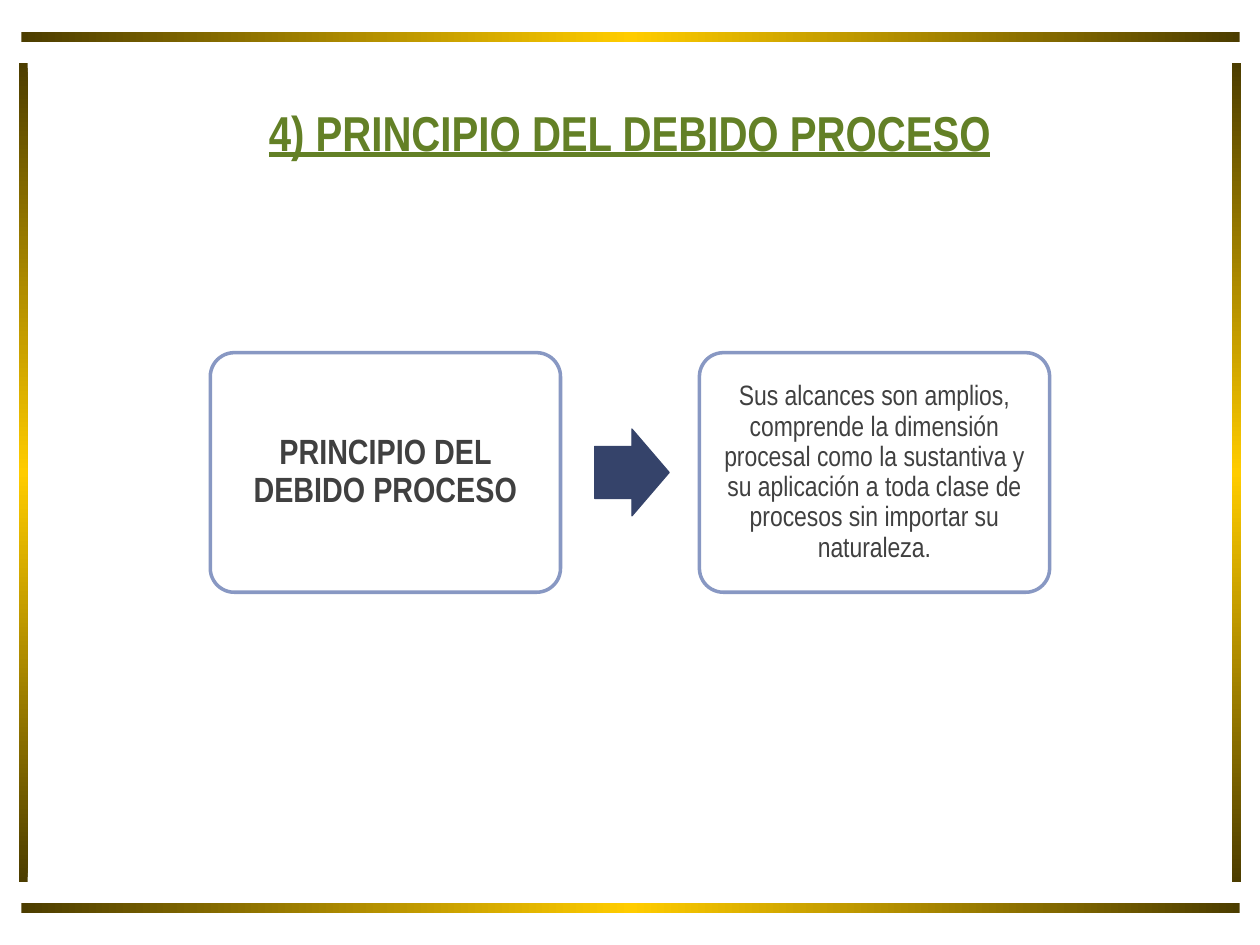
"""Build the slide on the principle of due process."""
from copy import deepcopy
from dataclasses import dataclass

from pptx import Presentation
from pptx.dml.color import RGBColor
from pptx.enum.shapes import MSO_SHAPE
from pptx.enum.text import MSO_ANCHOR, PP_ALIGN
from pptx.oxml.ns import qn
from pptx.shapes.autoshape import Shape
from pptx.slide import Slide
from pptx.text.text import TextFrame
from pptx.util import Cm, Pt

SLIDE_WIDTH, SLIDE_HEIGHT = 25.4, 19.05
CARD_WIDTH, CARD_HEIGHT, CARD_MARGIN, CARD_TOP = 7.06, 4.83, 4.24, 7.11
ARROW_WIDTH, ARROW_HEIGHT = 1.5, 1.75
DARK_GOLD, GOLD = "4C3D00", "FFCC00"
GREEN, GREY, PALE_BLUE, NAVY = "638026", "404040", "8898C3", "35436A"


@dataclass(frozen=True)
class Box:
    left: float
    top: float
    width: float
    height: float

    def emu(self) -> tuple[Cm, Cm, Cm, Cm]:
        return Cm(self.left), Cm(self.top), Cm(self.width), Cm(self.height)


@dataclass(frozen=True)
class Wording:
    text: str
    size: int
    color: str = GREY
    bold: bool = False
    underline: bool = False
    line_spacing: float = 1.0


@dataclass(frozen=True)
class Card:
    left: float
    wording: Wording
    inset: float


def rgb(value: str) -> RGBColor:
    return RGBColor.from_string(value)


def add_preset(slide: Slide, kind: MSO_SHAPE, box: Box) -> Shape:
    preset = slide.shapes.add_shape(kind, *box.emu())
    preset.shadow.inherit = False
    return preset


def add_bar(slide: Slide, box: Box) -> None:
    bar = add_preset(slide, MSO_SHAPE.RECTANGLE, box)
    bar.line.fill.background()
    bar.fill.gradient()
    bar.fill.gradient_angle = 0 if box.width > box.height else 90
    for stop, position in zip(bar.fill.gradient_stops, (0, 1)):
        stop.color.rgb = rgb(DARK_GOLD)
        stop.position = position
    first = bar._element.spPr.find(".//" + qn("a:gs"))
    first.addnext(deepcopy(first))
    middle = bar.fill.gradient_stops[1]
    middle.color.rgb = rgb(GOLD)
    middle.position = 0.5


def write(frame: TextFrame, wording: Wording) -> None:
    frame.word_wrap = True
    frame.vertical_anchor = MSO_ANCHOR.MIDDLE
    paragraph = frame.paragraphs[0]
    paragraph.text = wording.text
    paragraph.alignment = PP_ALIGN.CENTER
    paragraph.line_spacing = wording.line_spacing
    font = paragraph.font
    font.name = "Arial Narrow"
    font.size = Pt(wording.size)
    font.bold = wording.bold
    font.underline = wording.underline
    font.color.rgb = rgb(wording.color)


def add_card(slide: Slide, card: Card) -> None:
    outline = add_preset(slide, MSO_SHAPE.ROUNDED_RECTANGLE,
                         Box(card.left, CARD_TOP, CARD_WIDTH, CARD_HEIGHT))
    outline.adjustments[0] = 0.1
    outline.fill.background()
    outline.line.color.rgb = rgb(PALE_BLUE)
    outline.line.width = Pt(2)
    frame = outline.text_frame
    frame.margin_left = frame.margin_right = Cm(card.inset)
    frame.margin_top = frame.margin_bottom = Cm(card.inset)
    write(frame, card.wording)


def add_arrow(slide: Slide) -> None:
    arrow = add_preset(slide, MSO_SHAPE.RIGHT_ARROW, Box(
        11.99, CARD_TOP + (CARD_HEIGHT - ARROW_HEIGHT) / 2, ARROW_WIDTH, ARROW_HEIGHT))
    arrow.adjustments[0], arrow.adjustments[1] = 0.6, 0.5
    arrow.fill.solid()
    arrow.fill.fore_color.rgb = rgb(NAVY)
    arrow.line.color.rgb = rgb(NAVY)
    arrow.line.width = Pt(0.75)


def add_frame(slide: Slide) -> None:
    across = Box(0.43, 0.64, 24.56, 0.21)
    upright = Box(0.38, 1.27, 0.18, 16.51)
    for top in (across.top, SLIDE_HEIGHT - across.top - across.height):
        add_bar(slide, Box(across.left, top, across.width, across.height))
    for left in (upright.left, SLIDE_WIDTH - upright.left - upright.width):
        add_bar(slide, Box(left, upright.top, upright.width, upright.height))


def main() -> None:
    presentation = Presentation()
    presentation.slide_width, presentation.slide_height = Cm(SLIDE_WIDTH), Cm(SLIDE_HEIGHT)
    slide = presentation.slides.add_slide(presentation.slide_layouts[6])

    add_frame(slide)
    title = slide.shapes.add_textbox(*Box(1.9, 1.07, 21.59, 3.18).emu())
    write(title.text_frame, Wording("4) PRINCIPIO DEL DEBIDO PROCESO", 28, GREEN,
                                    bold=True, underline=True))

    principle = Wording("PRINCIPIO DEL DEBIDO PROCESO", 20, bold=True, line_spacing=0.9)
    scope = Wording(
        "Sus alcances son amplios, comprende la dimensión procesal como la sustantiva "
        "y su aplicación a toda clase de procesos sin importar su naturaleza.",
        16, line_spacing=0.9)
    add_card(slide, Card(CARD_MARGIN, principle, 0.2))
    add_arrow(slide)
    add_card(slide, Card(SLIDE_WIDTH - CARD_MARGIN - CARD_WIDTH, scope, 0.17))

    presentation.save("out.pptx")


if __name__ == "__main__":
    main()
